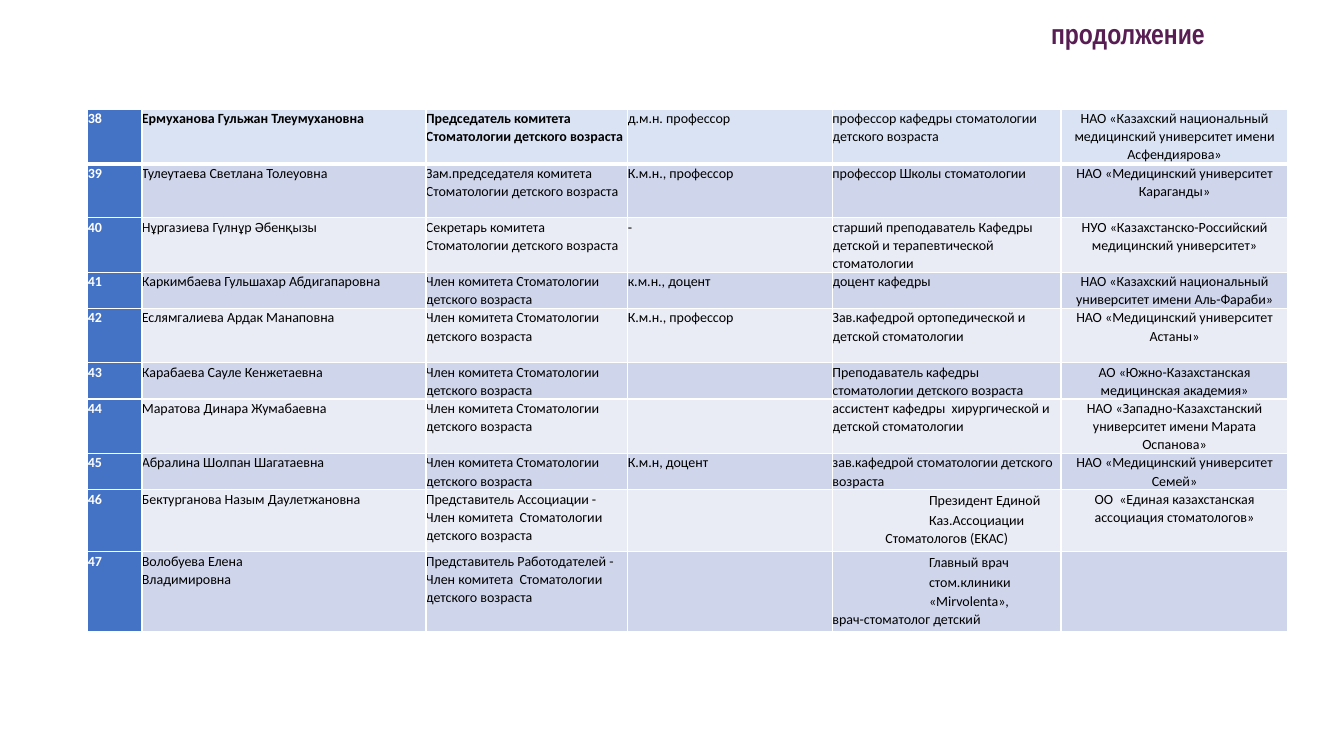
"""Build the slide that continues the list of committee members."""
from lxml.etree import SubElement
from pptx import Presentation
from pptx.dml.color import RGBColor as RGB
from pptx.enum.text import MSO_AUTO_SIZE as FIT, PP_ALIGN as AL
from pptx.oxml.ns import qn
from pptx.util import Pt

TITLE = "продолжение "
FIRST = 38
KIDS = "Стоматологии детского возраста"
MEMBER = f"Член комитета {KIDS}"
ROWS = [
    ("Ермуханова Гульжан Тлеумухановна", f"Председатель комитета {KIDS}",
     "д.м.н. профессор", "профессор кафедры стоматологии детского возраста",
     "НАО «Казахский национальный медицинский университет имени Асфендиярова»"),
    ("Тулеутаева Светлана Толеуовна", f"Зам.председателя комитета {KIDS}",
     "К.м.н., профессор", "профессор Школы стоматологии",
     "НАО «Медицинский университет Караганды»"),
    ("Нұргазиева Гүлнұр Әбенқызы", f"Секретарь комитета {KIDS}", "-",
     "старший преподаватель Кафедры детской и терапевтической стоматологии",
     "НУО «Казахстанско-Российский медицинский университет»"),
    ("Каркимбаева Гульшахар Абдигапаровна", MEMBER, "к.м.н., доцент",
     "доцент кафедры",
     "НАО «Казахский национальный университет имени Аль-Фараби»"),
    ("Еслямгалиева Ардак Манаповна", MEMBER, "К.м.н., профессор",
     "Зав.кафедрой ортопедической и детской стоматологии",
     "НАО «Медицинский университет Астаны»"),
    ("Карабаева Сауле Кенжетаевна", MEMBER, "",
     "Преподаватель кафедры стоматологии детского возраста",
     "АО «Южно-Казахстанская медицинская академия»"),
    ("Маратова Динара Жумабаевна", MEMBER, "",
     "ассистент кафедры  хирургической и  детской стоматологии",
     "НАО «Западно-Казахстанский университет имени Марата Оспанова»"),
    ("Абралина Шолпан Шагатаевна", MEMBER, "К.м.н, доцент",
     "зав.кафедрой стоматологии детского возраста",
     "НАО «Медицинский университет Семей»"),
    ("Бектурганова Назым Даулетжановна",
     f"Представитель Ассоциации - Член комитета  {KIDS}", "",
     "Президент Единой Каз.Ассоциации\nСтоматологов (ЕКАС)",
     "ОО  «Единая казахстанская ассоциация стоматологов»"),
    ("Волобуева Елена\nВладимировна",
     f"Представитель Работодателей - Член комитета  {KIDS}", "",
     "Главный врач стом.клиники «Mirvolenta»,\nврач-стоматолог детский", ""),
]
WIDTHS = (38.6, 202.9, 144.2, 146.2, 163.2, 162.2)
TALL, LOW = 38.7, 25.8
HEIGHTS = (TALL, TALL, TALL, LOW, TALL, LOW, TALL, LOW, 44.2, 57.4)
LEFT, TOP = 62.8, 78
DUTY, PLACE = 4, 5
INDENT = 69
CENTRED = "Стоматологов (ЕКАС)"
THEME = {
    "title": ("Arial Narrow", 20, "581D53"),
    "key": ("Calibri", 10, "FFFFFF"),
    "body": ("Calibri", 10, "000000"),
    "blue": "4472C4", "head": "DAE3F3", "bands": ("E9EBF5", "CFD5EA"),
    "rule": "FFFFFF", "thin": 1, "thick": 3,
}


def style(para, role, bold):
    """Format the runs of a paragraph."""
    face, size, color = THEME[role]
    for run in para.runs:
        font = run.font
        font.name, font.size, font.bold = face, Pt(size), bold
        font.color.rgb = RGB.from_string(color)


def edge(cell, row):
    """Draw the cell borders, heavy below the first row."""
    props = cell._tc.get_or_add_tcPr()
    heavy = {0: "lnB", 1: "lnT"}.get(row)
    for side in ("lnL", "lnR", "lnT", "lnB"):
        wide = THEME["thick" if side == heavy else "thin"]
        line = SubElement(props, qn(f"a:{side}"), w=str(Pt(wide)))
        fill = SubElement(line, qn("a:solidFill"))
        SubElement(fill, qn("a:srgbClr"), val=THEME["rule"])


def write(cell, text, row, col):
    """Put text in a cell and lay out its paragraphs."""
    cell.margin_left = cell.margin_right = 0
    cell.margin_top = cell.margin_bottom = 0
    frame = cell.text_frame
    frame.text = text
    paras = frame.paragraphs
    for para in paras:
        para.line_spacing = 1.07
        if col == PLACE or para.text == CENTRED:
            para.alignment = AL.CENTER
        bold = col == 0 or (row == 0 and col < 3)
        style(para, "body" if col else "key", bold)
    if col == DUTY and len(paras) > 1:
        paras[0].line_spacing = 1.15
        paras[0]._p.get_or_add_pPr().set("marL", str(Pt(INDENT)))


def shade(row, col):
    """Choose the fill of a cell."""
    if col == 0:
        return THEME["blue"]
    return THEME["bands"][row % 2] if row else THEME["head"]


def main():
    """Lay out the slide and save it."""
    deck = Presentation()
    deck.slide_width, deck.slide_height = Pt(960), Pt(540)
    slide = deck.slides.add_slide(deck.slide_layouts[6])
    grid = slide.shapes.add_table(
        len(ROWS), len(WIDTHS), Pt(LEFT), Pt(TOP),
        Pt(sum(WIDTHS)), Pt(sum(HEIGHTS))).table
    grid.first_row = grid.horz_banding = False
    for col, wide in zip(grid.columns, WIDTHS):
        col.width = Pt(wide)
    for row, (texts, high) in enumerate(zip(ROWS, HEIGHTS)):
        grid.rows[row].height = Pt(high)
        for col, text in enumerate((str(FIRST + row), *texts)):
            cell = grid.cell(row, col)
            write(cell, text, row, col)
            edge(cell, row)
            cell.fill.solid()
            cell.fill.fore_color.rgb = RGB.from_string(shade(row, col))

    box = slide.shapes.add_textbox(Pt(679), Pt(8), Pt(258), Pt(31.5))
    frame = box.text_frame
    frame.word_wrap = True
    frame.auto_size = FIT.SHAPE_TO_FIT_TEXT
    frame.text = TITLE
    para = frame.paragraphs[0]
    para.alignment = AL.CENTER
    style(para, "title", True)
    deck.save("out.pptx")


if __name__ == "__main__":
    main()
